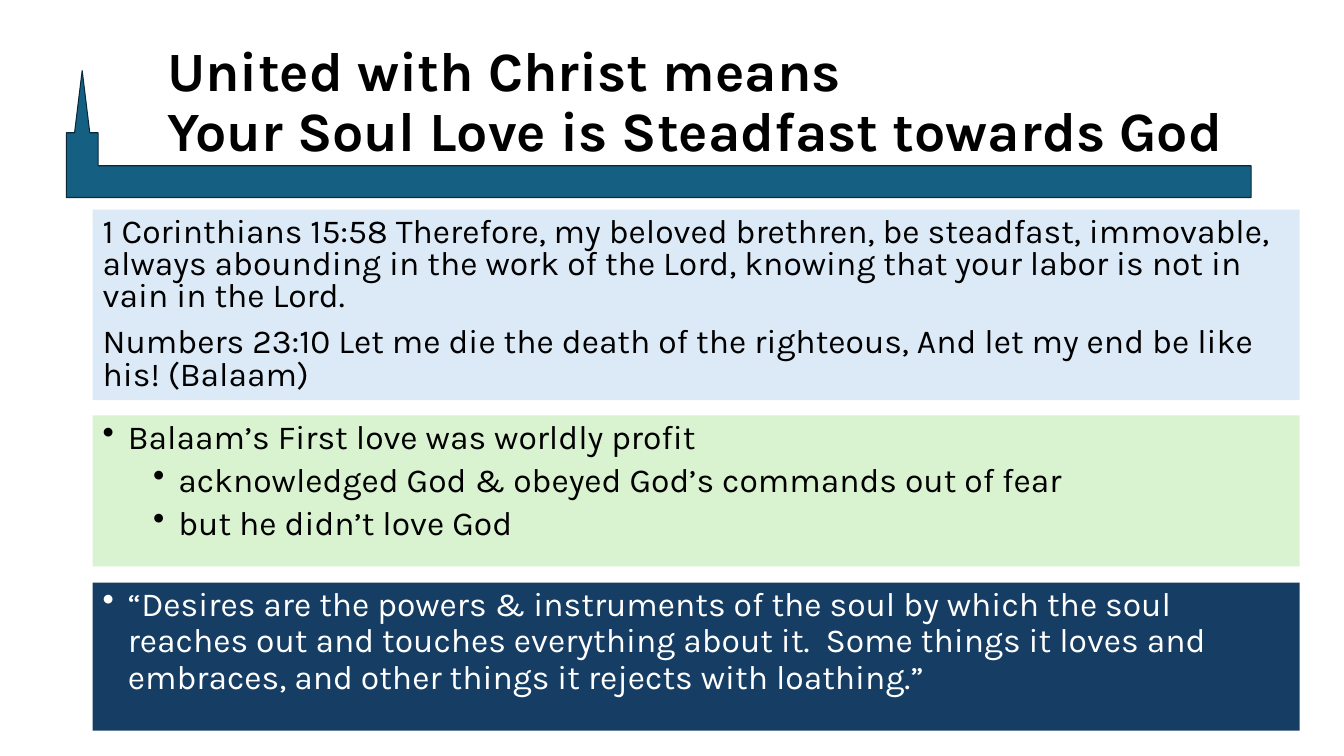
from lxml import etree
from pptx import Presentation
from pptx.dml.color import RGBColor
from pptx.enum.shapes import MSO_SHAPE
from pptx.enum.text import MSO_ANCHOR, PP_ALIGN
from pptx.oxml.ns import qn
from pptx.util import Inches, Pt

RECT, ARROW = MSO_SHAPE.RECTANGLE, MSO_SHAPE.BENT_UP_ARROW
TOP, MIDDLE = MSO_ANCHOR.TOP, MSO_ANCHOR.MIDDLE
LEFT = PP_ALIGN.LEFT

COLORS = {
    "black": "000000", "white": "FFFFFF", "teal": "156082", "edge": "092A39",
    "sky": "DCEAF7", "mint": "D9F2D0", "navy": "163E64",
}


def color(name):
    return RGBColor.from_string(COLORS[name])


class Deck:
    font = "Karla"

    def __init__(self):
        self.prs = Presentation()
        self.prs.slide_width, self.prs.slide_height = Inches(13.33), Inches(7.5)
        self.slide = self.prs.slides.add_slide(self.prs.slide_layouts[6])

    def shape(self, kind, box, fill, line=None):
        item = self.slide.shapes.add_shape(kind, *map(Inches, box))
        item.shadow.inherit = False
        item.fill.solid()
        item.fill.fore_color.rgb = color(fill)
        if line:
            item.line.color.rgb = color(line)
            item.line.width = Pt(0.75)
        else:
            item.line.fill.background()
        return item

    def steeple(self, box):
        item = self.shape(ARROW, box, "teal", "edge")
        for i, value in enumerate((0.25, 0.06, 0.49)):
            item.adjustments[i] = value
        item._element.spPr.find(qn("a:xfrm")).set("flipH", "1")

    def bullet(self, para, level):
        props = para._p.get_or_add_pPr()
        props.set("marL", str(Inches(0.25 + 0.5 * level)))
        props.set("indent", str(Inches(-0.25)))
        etree.SubElement(props, qn("a:buChar")).set("char", "•")

    def text(self, frame, lines, ink, size=24, bold=False,
             anchor=TOP, space=0.9, dots=False):
        frame.word_wrap = True
        frame.vertical_anchor = anchor
        for i, (level, words) in enumerate(lines):
            para = frame.add_paragraph() if i else frame.paragraphs[0]
            para.text = words
            if dots:
                self.bullet(para, level)
            form = {"level": level, "alignment": LEFT, "line_spacing": space,
                    "space_before": Pt((5 if level else 10) if i else 0)}
            for key, value in form.items():
                setattr(para, key, value)
            style = {"name": self.font, "size": Pt(size), "bold": bold}
            for run in para.runs:
                for key, value in style.items():
                    setattr(run.font, key, value)
                run.font.color.rgb = color(ink)

    def title(self, box, words):
        item = self.slide.shapes.add_textbox(*map(Inches, box))
        self.text(item.text_frame, [(0, words)], "black", 39.6, True, MIDDLE)

    def panel(self, top, height, fill, lines, ink="black", **form):
        item = self.shape(RECT, (0.92, top, 11.97, height), fill)
        self.text(item.text_frame, lines, ink, **form)


def main():
    deck = Deck()

    # Heading with the steeple bar
    deck.steeple((0.74, 0.7, 11.67, 1.26))
    deck.title((1.56, 0.4, 10.86, 1.26),
               "United with Christ means\vYour Soul Love is Steadfast towards God")

    # Scripture
    deck.panel(2.08, 1.89, "sky", [
        (0, "1 Corinthians 15:58 Therefore, my beloved brethren, be steadfast, "
            "immovable, always abounding in the work of the Lord, knowing that "
            "your labor is not in vain in the Lord."),
        (0, "Numbers 23:10 Let me die the death of the righteous, And let my end "
            "be like his! (Balaam)"),
    ], anchor=MIDDLE, space=0.8)

    # Balaam
    deck.panel(4.12, 1.5, "mint", [
        (0, "Balaam’s First love was worldly profit"),
        (1, "acknowledged God & obeyed God’s commands out of fear"),
        (1, "but he didn’t love God"),
    ], dots=True)

    # Quotation
    deck.panel(5.78, 1.47, "navy", [
        (0, "“Desires are the powers & instruments of the soul by which the soul "
            "reaches out and touches everything about it.  Some things it loves "
            "and embraces, and other things it rejects with loathing.”"),
    ], ink="white", dots=True)

    deck.prs.save("out.pptx")


if __name__ == "__main__":
    main()
